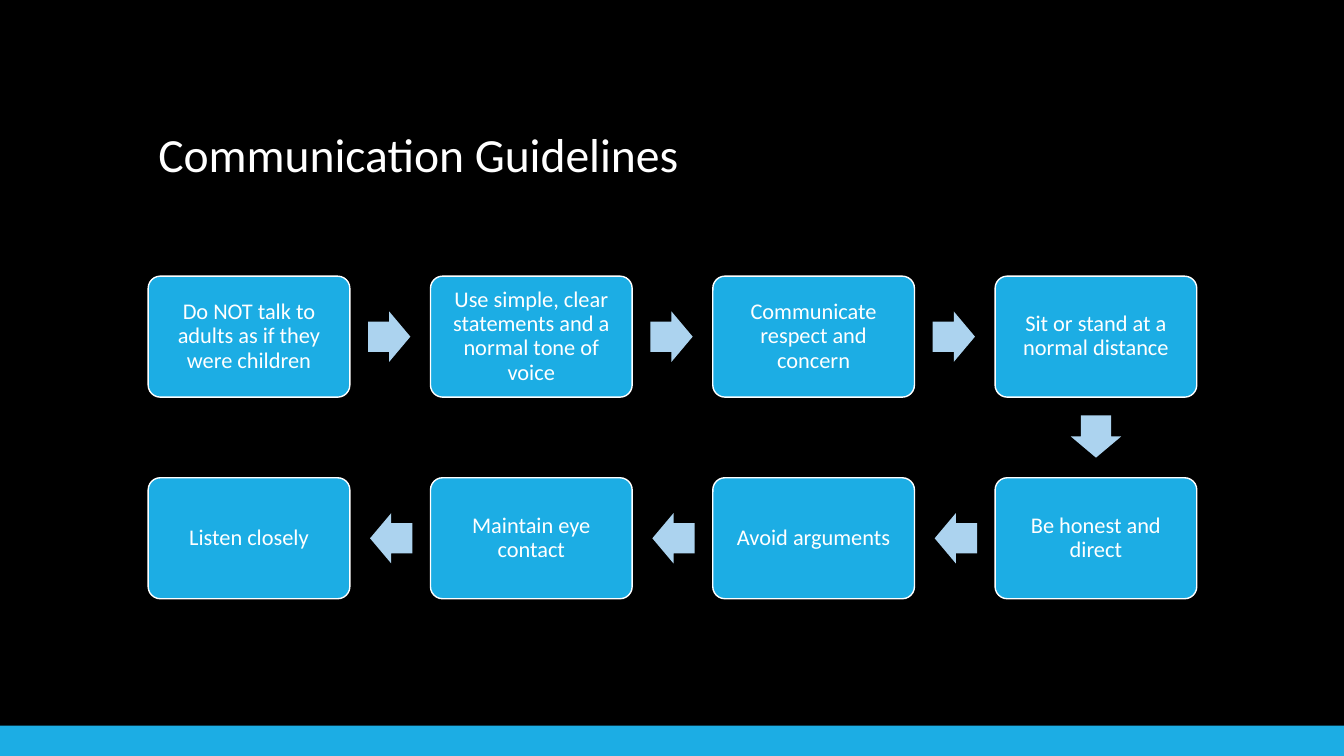
from pptx import Presentation
from pptx.dml.color import RGBColor
from pptx.enum import shapes, text
from pptx.util import Inches, Pt

COLOURS = {"background": "000000", "accent": "1CADE4", "arrow": "ACD3EF", "text": "FFFFFF"}
FONT = "Calibri"
COLUMNS = 4
STEP_WIDTH, STEP_HEIGHT = 2, 1.2
COLUMN_PITCH, ROW_PITCH = 2.8, 2
ARROW_LENGTH, ARROW_BREADTH, ARROW_OFFSET = 0.42, 0.5, 0.39
GUIDELINES = [
    "Do NOT talk to adults as if they were children",
    "Use simple, clear statements and a normal tone of voice",
    "Communicate respect and concern",
    "Sit or stand at a normal distance",
    "Be honest and direct",
    "Avoid arguments",
    "Maintain eye contact",
    "Listen closely",
]


def rgb(name):
    return RGBColor.from_string(COLOURS[name])


def style_paragraph(paragraph, size, alignment):
    paragraph.alignment = alignment
    paragraph.line_spacing = 0.9
    paragraph.font.name = FONT
    paragraph.font.size = Pt(size)
    paragraph.font.color.rgb = rgb("text")


def add_block(slide, kind, box, colour):
    block = slide.shapes.add_shape(kind, *map(Inches, box))
    block.shadow.inherit = False
    block.fill.solid()
    block.fill.fore_color.rgb = rgb(colour)
    block.line.fill.background()
    return block


def add_title(slide, box, wording):
    title = slide.shapes.title
    title.left, title.top, title.width, title.height = map(Inches, box)
    title.text_frame.text = wording
    title.text_frame.vertical_anchor = text.MSO_ANCHOR.BOTTOM
    style_paragraph(title.text_frame.paragraphs[0], 34, text.PP_ALIGN.LEFT)


def add_step(slide, left, top, wording):
    step = add_block(slide, shapes.MSO_SHAPE.ROUNDED_RECTANGLE,
                     (left, top, STEP_WIDTH, STEP_HEIGHT), "accent")
    step.adjustments[0] = 0.1
    step.line.color.rgb = rgb("text")
    step.line.width = Pt(1)
    frame = step.text_frame
    frame.word_wrap = True
    frame.vertical_anchor = text.MSO_ANCHOR.MIDDLE
    frame.margin_left = frame.margin_right = Inches(0.07)
    frame.margin_top = frame.margin_bottom = Inches(0.07)
    frame.text = wording
    style_paragraph(frame.paragraphs[0], 16, text.PP_ALIGN.CENTER)


def add_arrow(slide, left, top, across, down):
    center_x = left + STEP_WIDTH / 2 + across * (STEP_WIDTH / 2 + ARROW_OFFSET)
    center_y = top + STEP_HEIGHT / 2 + down * (STEP_HEIGHT / 2 + ARROW_OFFSET)
    box = (center_x - ARROW_LENGTH / 2, center_y - ARROW_BREADTH / 2,
           ARROW_LENGTH, ARROW_BREADTH)
    arrow = add_block(slide, shapes.MSO_SHAPE.RIGHT_ARROW, box, "arrow")
    arrow.adjustments[0] = 0.6
    arrow.adjustments[1] = 0.5
    arrow.rotation = 90 if down else 90 * (1 - across)


def add_guideline_flow(slide, left, top, guidelines):
    def cell(index):
        row, column = divmod(index, COLUMNS)
        return row, COLUMNS - 1 - column if row % 2 else column

    for index, guideline in enumerate(guidelines):
        row, column = cell(index)
        step_left, step_top = left + column * COLUMN_PITCH, top + row * ROW_PITCH
        add_step(slide, step_left, step_top, guideline)
        if index + 1 < len(guidelines):
            next_row, next_column = cell(index + 1)
            add_arrow(slide, step_left, step_top, next_column - column, next_row - row)


def main():
    deck = Presentation()
    deck.slide_width, deck.slide_height = Inches(13.33), Inches(7.5)
    slide = deck.slides.add_slide(deck.slide_layouts[5])
    slide.background.fill.solid()
    slide.background.fill.fore_color.rgb = rgb("background")
    add_block(slide, shapes.MSO_SHAPE.RECTANGLE, (0, 7.2, 13.33, 0.3), "accent")
    add_title(slide, (1.47, 0.51, 10.4, 1.35), "Communication Guidelines")
    add_guideline_flow(slide, 1.47, 2.74, GUIDELINES)
    deck.save("out.pptx")


if __name__ == "__main__":
    main()
